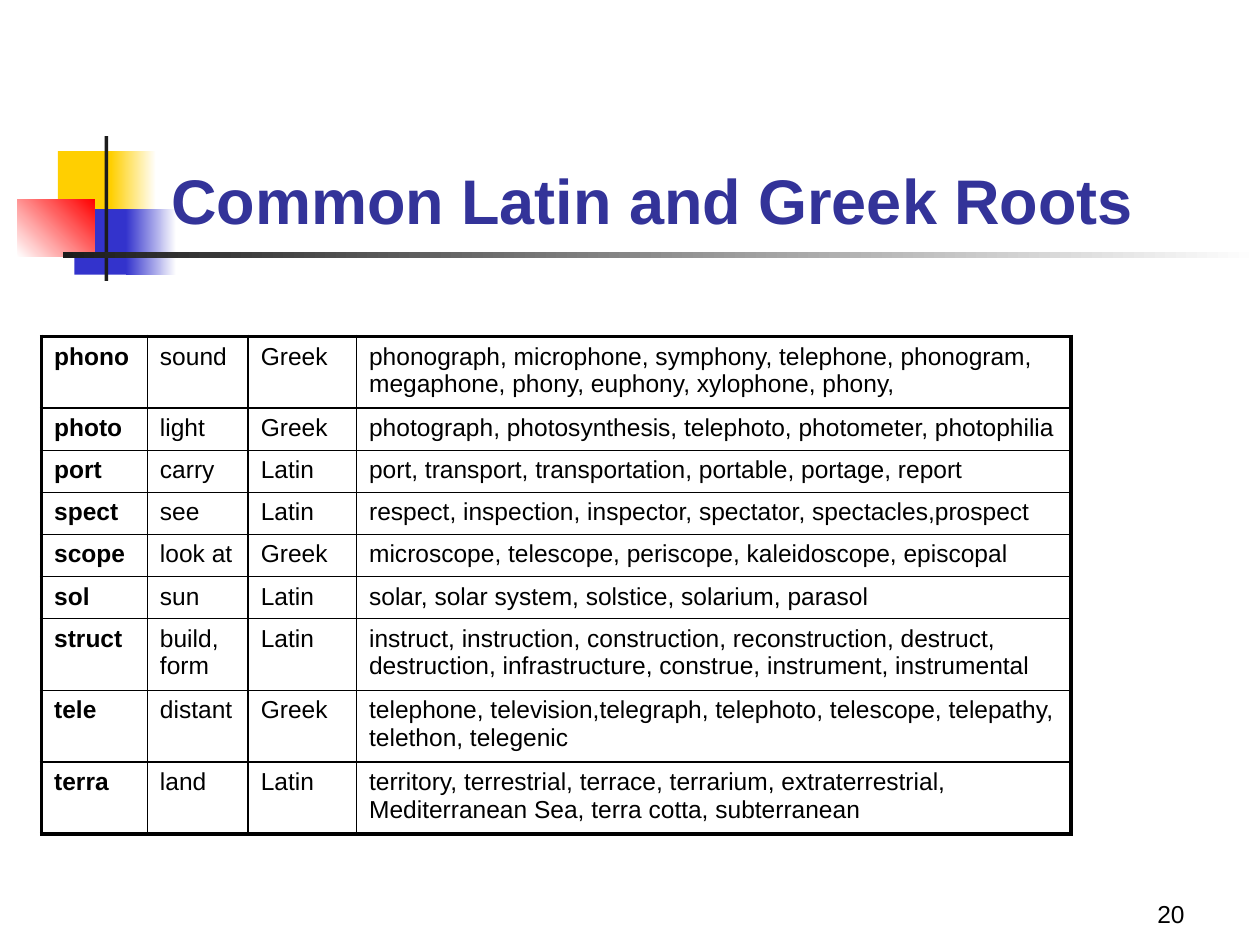
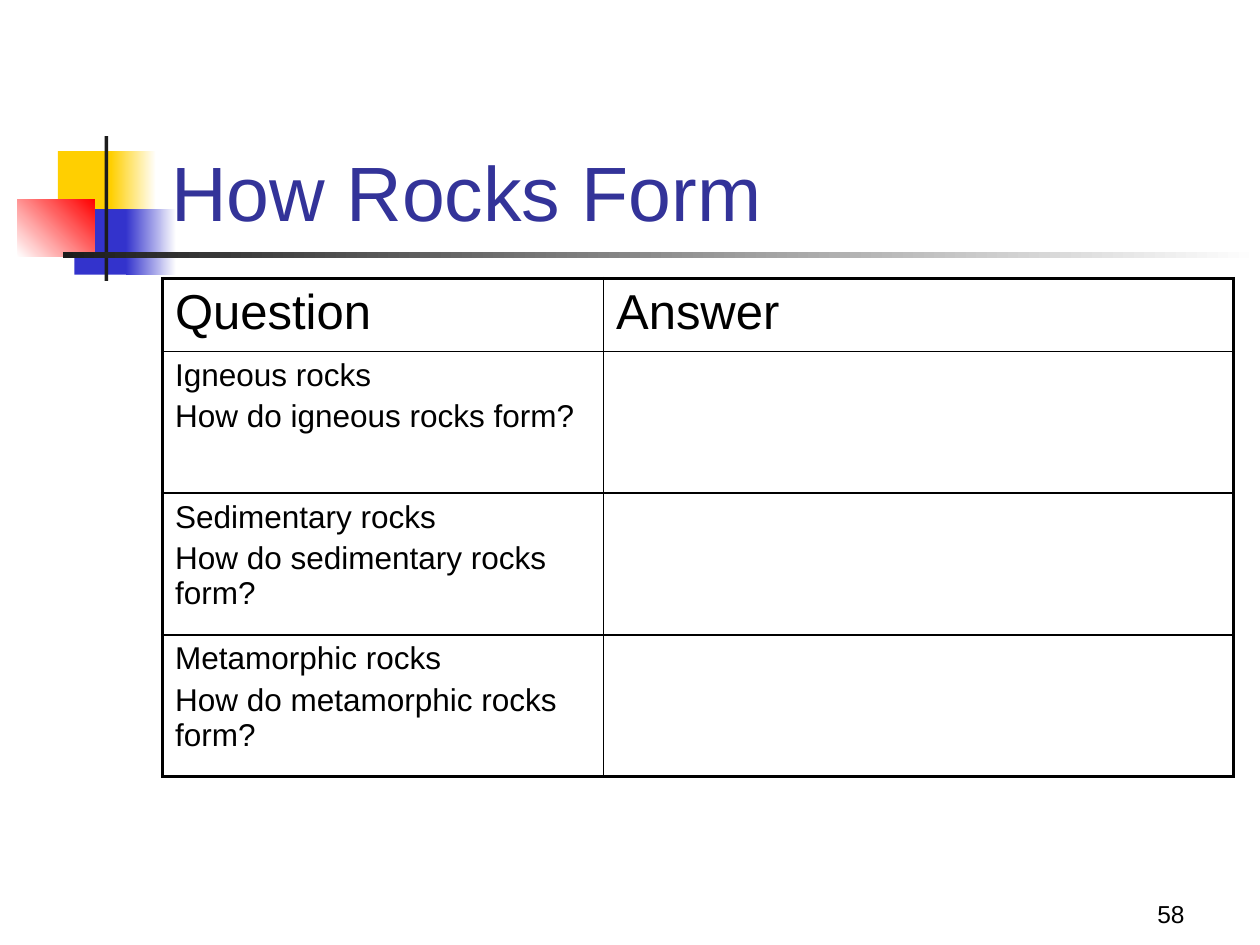
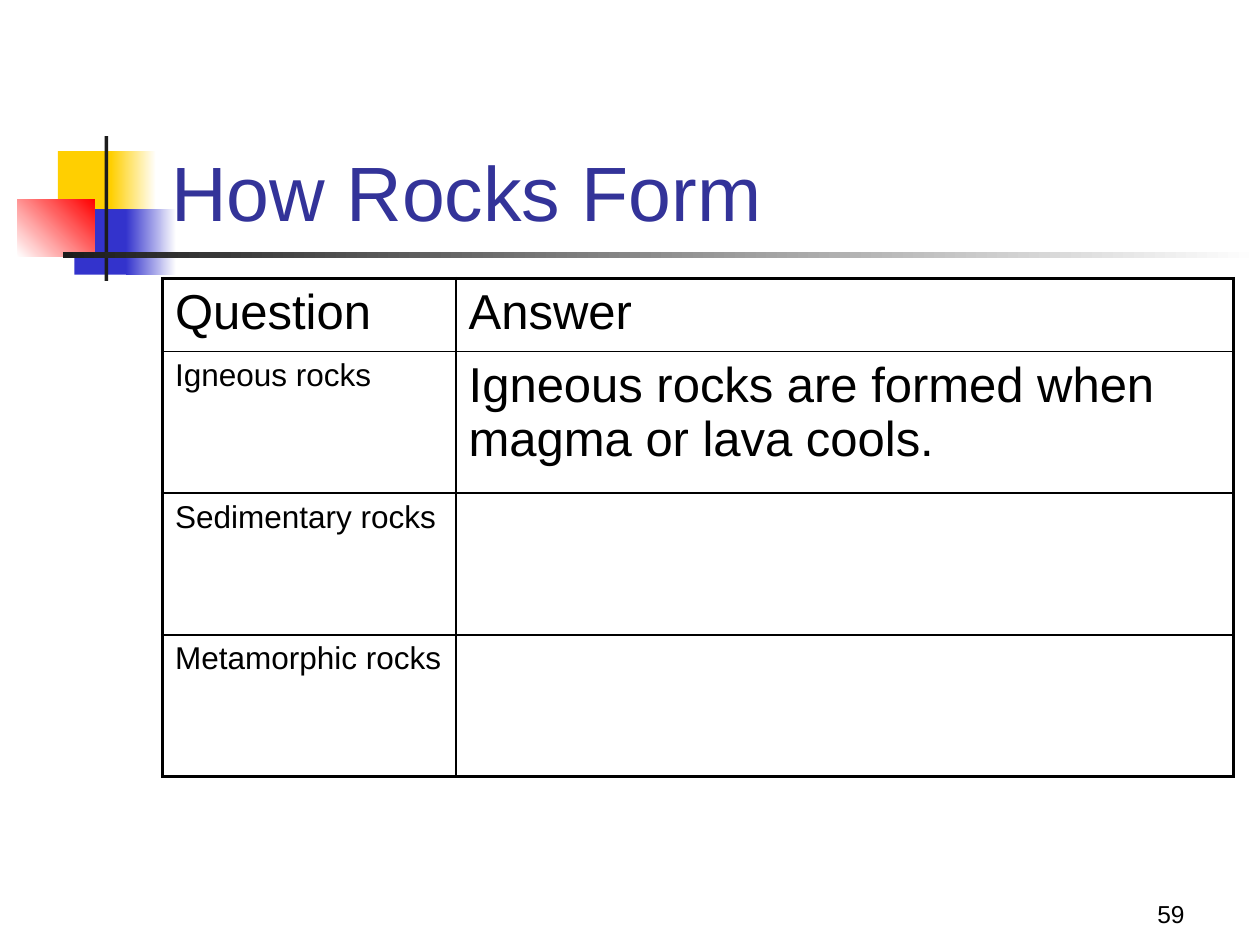
"""Build three vocabulary and science slides that share one title band."""

from dataclasses import dataclass
from typing import Optional

import lxml.etree
import pptx
import pptx.dml.color
import pptx.enum.shapes
import pptx.enum.text
import pptx.oxml.ns
import pptx.util

Inches = pptx.util.Inches
Align = pptx.enum.text.PP_ALIGN
Anchor = pptx.enum.text.MSO_ANCHOR


@dataclass(frozen=True)
class Theme:
    """Colours, font and type sizes of the deck."""

    font: str = "Arial"
    title: str = "333399"
    text: str = "000000"
    white: str = "FFFFFF"
    yellow: str = "FFCF01"
    blue: str = "3333CC"
    red: str = "FF0000"
    ink: str = "1C1C1C"
    title_size: int = 44
    long_title_size: int = 36
    large: int = 28
    medium: int = 18
    small: int = 14
    outer_line: float = 2.25
    inner_line: float = 1


THEME = Theme()


@dataclass(frozen=True)
class Block:
    """A rectangle of the title band, with a gradient when it has an end colour."""

    left: float
    top: float
    width: float
    height: float
    color: str
    end: Optional[str] = None
    angle: float = 0


@dataclass(frozen=True)
class Grid:
    """A bordered table with its type sizes."""

    left: float
    top: float
    cols: list[float]
    rows: list[float]
    cells: list[list[str]]
    head_size: int
    key_size: int
    body_size: int
    key_bold: bool = False
    gap: float = 0


@dataclass(frozen=True)
class Page:
    """One slide with a title, a number and a table."""

    title: str
    number: int
    grid: Grid
    title_size: int = THEME.title_size
    title_bold: bool = False


BAND = [
    Block(0.46, 1.2, 0.48, 0.52, THEME.yellow),
    Block(0.88, 1.2, 0.36, 0.52, THEME.yellow, THEME.white),
    Block(0.59, 1.66, 0.46, 0.52, THEME.blue),
    Block(1, 1.66, 0.4, 0.52, THEME.blue, THEME.white),
    Block(0.14, 1.58, 0.61, 0.46, THEME.white, THEME.red, 45),
    Block(0.83, 1.08, 0.03, 1.15, THEME.ink),
    Block(0.5, 2, 9.5, 0.05, THEME.ink, THEME.white),
]

ROOTS = [
    ["phono", "sound", "Greek",
     "phonograph, microphone, symphony, telephone, phonogram,\n"
     "megaphone, phony, euphony, xylophone, phony,"],
    ["photo", "light", "Greek",
     "photograph, photosynthesis, telephoto, photometer, photophilia"],
    ["port", "carry", "Latin",
     "port, transport, transportation, portable, portage, report"],
    ["spect", "see", "Latin",
     "respect, inspection, inspector, spectator, spectacles,prospect"],
    ["scope", "look at", "Greek",
     "microscope, telescope, periscope, kaleidoscope, episcopal"],
    ["sol", "sun", "Latin", "solar, solar system, solstice, solarium, parasol"],
    ["struct", "build, form", "Latin",
     "instruct, instruction, construction, reconstruction, destruct, "
     "destruction, infrastructure, construe, instrument, instrumental"],
    ["tele", "distant", "Greek",
     "telephone, television,telegraph, telephoto, telescope, telepathy, "
     "telethon, telegenic"],
    ["terra", "land", "Latin",
     "territory, terrestrial, terrace, terrarium, extraterrestrial, "
     "Mediterranean Sea, terra cotta, subterranean"],
]

QUESTIONS = [
    ["Question", "Answer"],
    ["Igneous rocks\nHow do igneous rocks form?", ""],
    ["Sedimentary rocks\nHow do sedimentary rocks form?", ""],
    ["Metamorphic rocks\nHow do metamorphic rocks form?", ""],
]

ANSWERS = [
    ["Question", "Answer"],
    ["Igneous rocks", "Igneous rocks are formed when magma or lava cools."],
    ["Sedimentary rocks", ""],
    ["Metamorphic rocks", ""],
]


def rocks_grid(cols: list[float], cells: list[list[str]]) -> Grid:
    """Return a question and answer table."""
    return Grid(1.29, 2.21, cols, [0.58] + [1.125] * 3, cells,
                THEME.large, THEME.medium, THEME.large, gap=0.2)


PAGES = [
    Page("Common Latin and Greek Roots", 20,
         Grid(0.33, 2.67, [0.84, 0.8, 0.86, 5.67],
              [0.57] + [0.33] * 5 + [0.57] * 3, ROOTS,
              THEME.small, THEME.small, THEME.small, key_bold=True),
         THEME.long_title_size, True),
    Page("How Rocks Form", 58, rocks_grid([3.5, 5], QUESTIONS)),
    Page("How Rocks Form", 59, rocks_grid([2.33, 6.17], ANSWERS)),
]


def rgb(color: str) -> pptx.dml.color.RGBColor:
    """Return a colour from its hexadecimal name."""
    return pptx.dml.color.RGBColor.from_string(color)


def write(tf, text: str, *, size: float, color: str = THEME.text,
          bold: bool = False, align=Align.LEFT, gap: float = 0) -> None:
    """Write one paragraph a line, with a gap given as a share of the type size."""
    for i, line in enumerate(text.split("\n")):
        p = tf.add_paragraph() if i else tf.paragraphs[0]
        p.alignment = align
        if i:
            p.space_before = pptx.util.Pt(size * gap)
        r = p.add_run()
        r.text = line
        r.font.name = THEME.font
        r.font.size = pptx.util.Pt(size)
        r.font.bold = bold
        r.font.color.rgb = rgb(color)


def add_text(s, left: float, top: float, width: float, height: float,
             text: str, **fmt) -> None:
    """Add a wrapped text box whose text stands on its bottom edge."""
    sp = s.shapes.add_textbox(Inches(left), Inches(top), Inches(width), Inches(height))
    tf = sp.text_frame
    tf.word_wrap = True
    tf.vertical_anchor = Anchor.BOTTOM
    write(tf, text, **fmt)


def add_block(s, block: Block) -> None:
    """Add one rectangle of the title band."""
    sp = s.shapes.add_shape(
        pptx.enum.shapes.MSO_SHAPE.RECTANGLE, Inches(block.left), Inches(block.top),
        Inches(block.width), Inches(block.height))
    sp.shadow.inherit = False
    sp.line.fill.background()
    if block.end is None:
        sp.fill.solid()
        sp.fill.fore_color.rgb = rgb(block.color)
        return
    sp.fill.gradient()
    sp.fill.gradient_angle = block.angle
    for stop, color in zip(sp.fill.gradient_stops, (block.color, block.end)):
        stop.color.rgb = rgb(color)


def set_borders(cell, outer: dict[str, bool]) -> None:
    """Draw the four cell borders, heavier on the outer edges."""
    qn = pptx.oxml.ns.qn
    tc_pr = cell._tc.get_or_add_tcPr()
    for i, (side, is_outer) in enumerate(outer.items()):
        width = THEME.outer_line if is_outer else THEME.inner_line
        ln = lxml.etree.Element(qn(f"a:ln{side}"), w=str(pptx.util.Pt(width)))
        fill = lxml.etree.SubElement(ln, qn("a:solidFill"))
        lxml.etree.SubElement(fill, qn("a:srgbClr"), val=THEME.text)
        tc_pr.insert(i, ln)


def add_grid(s, grid: Grid) -> None:
    """Add a table without fill, framed by a heavy border."""
    n_rows, n_cols = len(grid.rows), len(grid.cols)
    table = s.shapes.add_table(
        n_rows, n_cols, Inches(grid.left), Inches(grid.top),
        Inches(sum(grid.cols)), Inches(sum(grid.rows))).table
    table.first_row = table.horz_banding = False
    for col, width in zip(table.columns, grid.cols):
        col.width = Inches(width)
    for row, height in zip(table.rows, grid.rows):
        row.height = Inches(height)
    for i, texts in enumerate(grid.cells):
        for j, text in enumerate(texts):
            cell = table.cell(i, j)
            cell.fill.background()
            set_borders(cell, {"L": j == 0, "R": j == n_cols - 1,
                               "T": i == 0, "B": i == n_rows - 1})
            if text:
                size = grid.key_size if j == 0 else grid.body_size
                write(cell.text_frame, text, size=grid.head_size if i == 0 else size,
                      bold=grid.key_bold and j == 0, gap=grid.gap)


def add_page(prs, page: Page) -> None:
    """Add a slide with its band, number, title and table."""
    s = prs.slides.add_slide(prs.slide_layouts[6])
    for block in BAND:
        add_block(s, block)
    add_text(s, 7.42, 6.92, 2.08, 0.5, str(page.number),
             size=THEME.small, align=Align.RIGHT)
    add_text(s, 1.26, 0.68, 8.52, 1.25, page.title, size=page.title_size,
             color=THEME.title, bold=page.title_bold)
    add_grid(s, page.grid)


def main() -> None:
    """Build and save the deck."""
    prs = pptx.Presentation()
    prs.slide_width, prs.slide_height = Inches(10), Inches(7.5)
    for page in PAGES:
        add_page(prs, page)
    prs.save("out.pptx")


if __name__ == "__main__":
    main()
